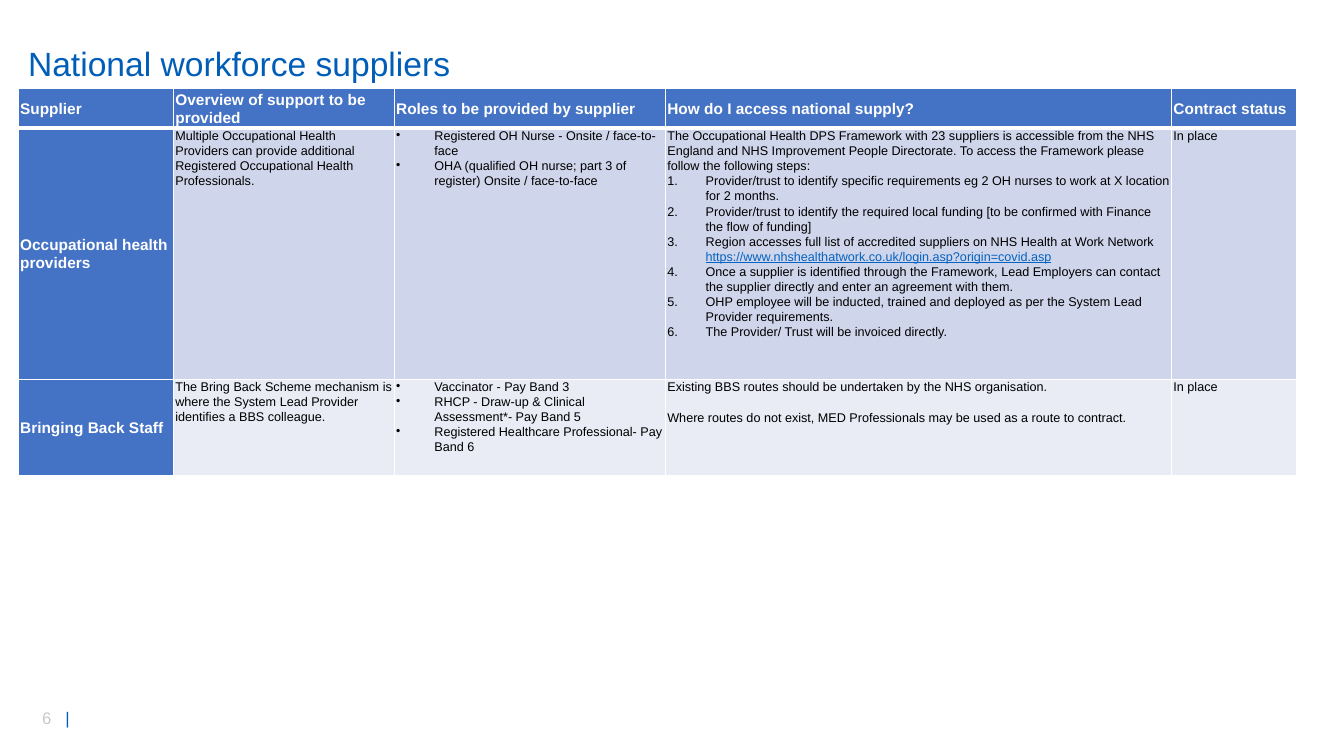
from pptx import Presentation
from pptx.dml.color import RGBColor
from pptx.enum.text import MSO_ANCHOR as Anchor
from pptx.oxml import parse_xml
from pptx.oxml.ns import nsdecls
from pptx.util import Inches, Pt

TITLE_BLUE = RGBColor(0x00, 0x5E, 0xB8)
LINK_BLUE = RGBColor(0x05, 0x63, 0xC1)
HEADER_BLUE = RGBColor(0x44, 0x72, 0xC4)
BAND_DARK = RGBColor(0xCF, 0xD5, 0xEA)
BAND_LIGHT = RGBColor(0xE9, 0xEB, 0xF5)
PAGE_GREY = RGBColor(0xC9, 0xC9, 0xC9)
WHITE = RGBColor(0xFF, 0xFF, 0xFF)
BLACK = RGBColor(0x00, 0x00, 0x00)

BULLET = '<a:buChar {} char="•"/>'
NUMBER = '<a:buAutoNum {} type="arabicPeriod"/>'
TAB_STOP = '<a:tabLst {}><a:tab pos="%d" algn="l"/></a:tabLst>'
BORDER = ('<a:{side} {ns} w="{width}"><a:solidFill><a:srgbClr val="FFFFFF"/>'
          '</a:solidFill></a:{side}>')

COLUMN_WIDTHS = [1.54, 2.19, 2.69, 5.02, 1.24]
ROW_HEIGHTS = [0.39, 2.49, 0.96]
LINK = "https://www.nhshealthatwork.co.uk/login.asp?origin=covid.asp"

# Each body cell is a list of (list marker, text) paragraphs.
HEADERS = ["Supplier", "Overview of support to be provided",
           "Roles to be provided by supplier",
           "How do I access national supply?", "Contract status"]
OCCUPATIONAL_HEALTH = [
    "Occupational health providers",
    "Multiple Occupational Health Providers can provide additional "
    "Registered Occupational Health Professionals.",
    [(BULLET, "Registered OH Nurse - Onsite / face-to-face"),
     (BULLET, "OHA (qualified OH nurse; part 3 of register) Onsite / face-to-face")],
    [(None, "The Occupational Health DPS Framework with 23 suppliers is accessible "
            "from the NHS England and NHS Improvement People Directorate. To access "
            "the Framework please follow the following steps:"),
     (NUMBER, "Provider/trust to identify specific requirements eg 2 OH nurses to "
              "work at X location for 2 months."),
     (NUMBER, "Provider/trust to identify the required local funding [to be "
              "confirmed with Finance the flow of funding]"),
     (NUMBER, "Region accesses full list of accredited suppliers on NHS Health at "
              "Work Network " + LINK),
     (NUMBER, "Once a supplier is identified through the Framework, Lead Employers "
              "can contact the supplier directly and enter an agreement with them."),
     (NUMBER, "OHP employee will be inducted, trained and deployed as per the "
              "System Lead Provider requirements."),
     (NUMBER, "The Provider/ Trust will be invoiced directly.")],
    "In place",
]
BRINGING_BACK = [
    "Bringing Back Staff",
    "The Bring Back Scheme mechanism is where the System Lead Provider "
    "identifies a BBS colleague.",
    [(BULLET, "Vaccinator - Pay Band 3"),
     (BULLET, "RHCP - Draw-up & Clinical Assessment*- Pay Band 5"),
     (BULLET, "Registered Healthcare Professional- Pay Band 6")],
    [(None, "Existing BBS routes should be undertaken by the NHS organisation."),
     (None, "Where routes do not exist, MED Professionals may be used as a route "
            "to contract.")],
    "In place",
]


def set_font(font, size, color, bold=False):
    font.name = "Arial"
    font.size = Pt(size)
    font.bold = bold
    font.color.rgb = color


def add_borders(cell, top, bottom):
    """Draw white cell edges; top and bottom are widths in points."""
    for side, width in (("lnL", 1), ("lnR", 1), ("lnT", top), ("lnB", bottom)):
        cell._tc.get_or_add_tcPr().append(parse_xml(
            BORDER.format(side=side, ns=nsdecls("a"), width=Pt(width))))


deck = Presentation()
deck.slide_width, deck.slide_height = Inches(13.33), Inches(7.5)
page = deck.slides.add_slide(deck.slide_layouts[6])

# Page number
number_box = page.shapes.add_textbox(Inches(0.32), Inches(6.97), Inches(0.71), Inches(0.3))
number_box.text_frame.word_wrap = True
para = number_box.text_frame.paragraphs[0]
para._p.get_or_add_pPr().append(
    parse_xml(TAB_STOP.format(nsdecls("a")) % Inches(0.23)))
for text, color in (("6\t", PAGE_GREY), ("|", TITLE_BLUE)):
    span = para.add_run()
    span.text = text
    set_font(span.font, 12, color)

# Title
title_box = page.shapes.add_textbox(Inches(0.18), Inches(0.32), Inches(10.43), Inches(0.67))
title_box.text_frame.word_wrap = True
title_box.text_frame.vertical_anchor = Anchor.MIDDLE
para = title_box.text_frame.paragraphs[0]
para.text = "National workforce suppliers"
para.line_spacing = 0.9
set_font(para.font, 24, TITLE_BLUE)

# Supplier table
rows = [HEADERS, OCCUPATIONAL_HEALTH, BRINGING_BACK]
table = page.shapes.add_table(
    len(rows), len(HEADERS), Inches(0.18), Inches(0.88),
    Inches(sum(COLUMN_WIDTHS)), Inches(sum(ROW_HEIGHTS))).table
table.first_col = True
for column, width in zip(table.columns, COLUMN_WIDTHS):
    column.width = Inches(width)

for r, (row, height, band) in enumerate(
        zip(rows, ROW_HEIGHTS, (HEADER_BLUE, BAND_DARK, BAND_LIGHT))):
    table.rows[r].height = Inches(height)
    for c, content in enumerate(row):
        cell = table.cell(r, c)
        heading = r == 0 or c == 0
        cell.margin_left = cell.margin_right = Inches(0.02)
        cell.margin_top = cell.margin_bottom = 0
        cell.vertical_anchor = Anchor.MIDDLE if heading else Anchor.TOP
        add_borders(cell, 3 if r == 1 else 1, 3 if r == 0 else 1)
        cell.fill.solid()
        cell.fill.fore_color.rgb = HEADER_BLUE if heading else band

        items = [(None, content)] if isinstance(content, str) else content
        frame = cell.text_frame
        for i, (marker, text) in enumerate(items):
            para = frame.add_paragraph() if i else frame.paragraphs[0]
            para.line_spacing = 1.07
            if marker:
                props = para._p.get_or_add_pPr()
                props.set("marL", str(Inches(0.38)))
                props.set("indent", str(-Inches(0.38)))
                props.append(parse_xml(marker.format(nsdecls("a"))))
            elif i:
                para.space_before = Pt(11)
            set_font(para.font, 11 if heading else 9, WHITE if heading else BLACK, heading)
            before, link, _ = text.partition(LINK)
            para.add_run().text = before
            if link:
                span = para.add_run()
                span.text = link
                span.font.underline = True
                span.font.color.rgb = LINK_BLUE

deck.save("out.pptx")
